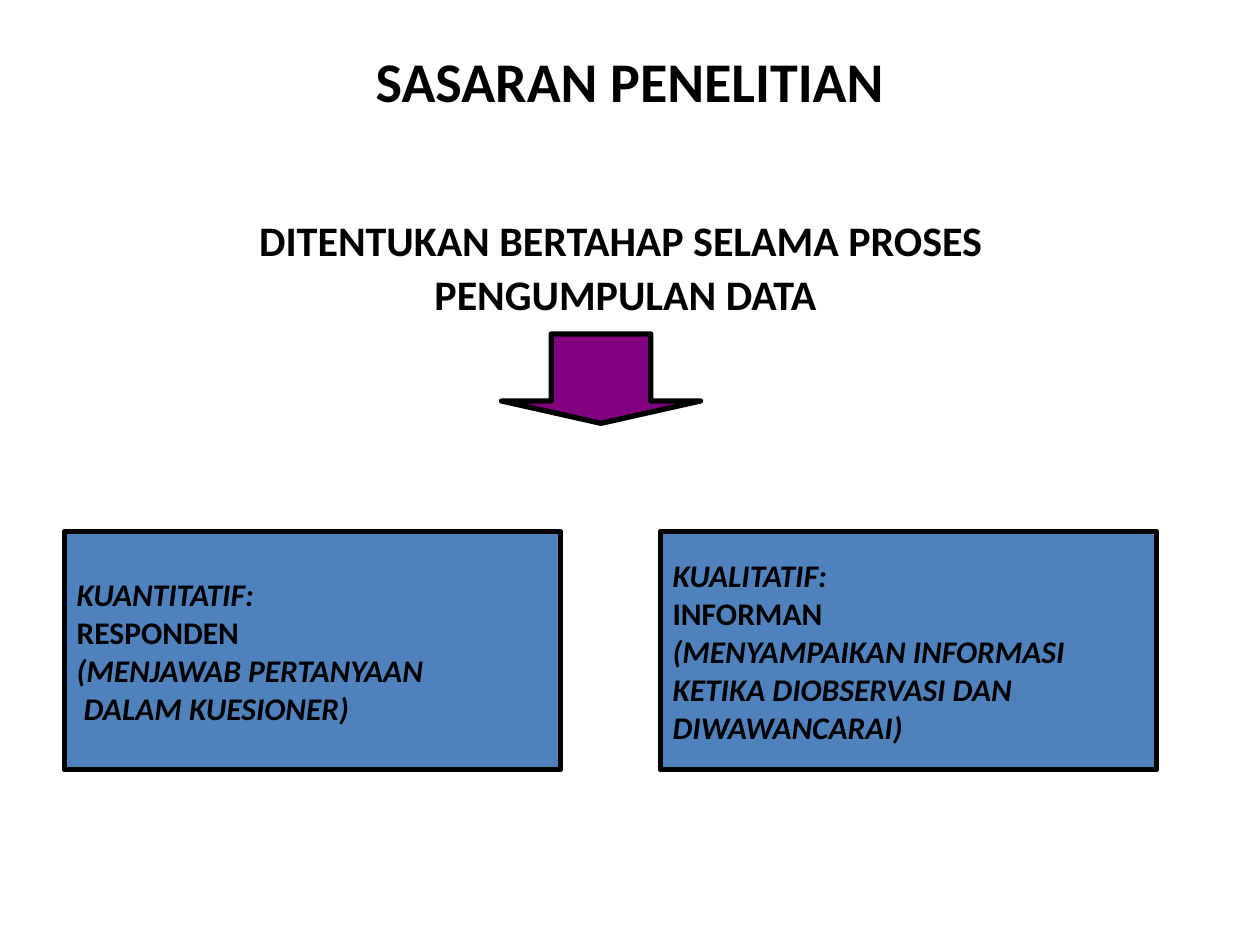
from pptx import Presentation
from pptx.dml.color import RGBColor as RGB
from pptx.enum.shapes import MSO_SHAPE as SHAPE
from pptx.enum.text import MSO_ANCHOR as ANCHOR, PP_ALIGN as ALIGN
from pptx.util import Inches, Pt

COLORS = {"text": "000000", "line": "000000", "arrow": "800080", "box": "4F81BD"}
FONT = "Calibri"

# Two columns of boxes, in inches
LEFT, PITCH, BOX_TOP, BOX_W, BOX_H = 0.51, 4.73, 4.22, 3.94, 1.89

# Each line: text, italic
BOXES = [
    [("KUANTITATIF:", True), ("RESPONDEN", False),
     ("(MENJAWAB PERTANYAAN", True), (" DALAM KUESIONER)", True)],
    [("KUALITATIF:", True), ("INFORMAN", False),
     ("(MENYAMPAIKAN INFORMASI", True), ("KETIKA DIOBSERVASI DAN", True),
     ("DIWAWANCARAI)", True)],
]


def write_lines(tf, lines, size, align, **spacing):
    for i, (text, italic) in enumerate(lines):
        p = tf.paragraphs[0] if i == 0 else tf.add_paragraph()
        p.alignment = align
        for name, value in spacing.items():
            if i or name != "space_before":
                setattr(p, name, value)
        r = p.add_run()
        r.text = text
        style = {"name": FONT, "size": Pt(size), "bold": True, "italic": italic}
        for name, value in style.items():
            setattr(r.font, name, value)
        r.font.color.rgb = RGB.from_string(COLORS["text"])


def add_text(s, area, lines, size, anchor, **spacing):
    tf = s.shapes.add_textbox(*map(Inches, area)).text_frame
    tf.word_wrap = True
    tf.vertical_anchor = anchor
    write_lines(tf, [(text, False) for text in lines], size, ALIGN.CENTER, **spacing)


def add_outlined(s, kind, area, color):
    sp = s.shapes.add_shape(kind, *map(Inches, area))
    sp.shadow.inherit = False
    sp.fill.solid()
    sp.fill.fore_color.rgb = RGB.from_string(COLORS[color])
    sp.line.color.rgb = RGB.from_string(COLORS["line"])
    sp.line.width = Pt(3)
    return sp


def add_box(s, column, lines):
    area = (LEFT + column * PITCH, BOX_TOP, BOX_W, BOX_H)
    tf = add_outlined(s, SHAPE.RECTANGLE, area, "box").text_frame
    tf.word_wrap = False
    tf.vertical_anchor = ANCHOR.MIDDLE
    write_lines(tf, lines, 18, ALIGN.LEFT)


def main():
    prs = Presentation()
    prs.slide_width, prs.slide_height = Inches(10), Inches(7.5)
    s = prs.slides.add_slide(prs.slide_layouts[6])

    # Title and statement
    add_text(s, (0.5, 0.28, 9, 0.71), ["SASARAN PENELITIAN"], 32, ANCHOR.MIDDLE)
    add_text(s, (0.2, 1.7, 9.53, 0.92),
             ["DITENTUKAN BERTAHAP SELAMA PROSES ", "PENGUMPULAN DATA"],
             24, ANCHOR.TOP, line_spacing=0.9, space_before=Pt(4.8))

    # Arrow down to the two approaches
    arrow = add_outlined(s, SHAPE.DOWN_ARROW, (3.98, 2.65, 1.58, 0.71), "arrow")
    arrow.adjustments[0], arrow.adjustments[1] = 0.5, 0.25

    # Quantitative and qualitative boxes
    for column, lines in enumerate(BOXES):
        add_box(s, column, lines)

    prs.save("out.pptx")


if __name__ == "__main__":
    main()
